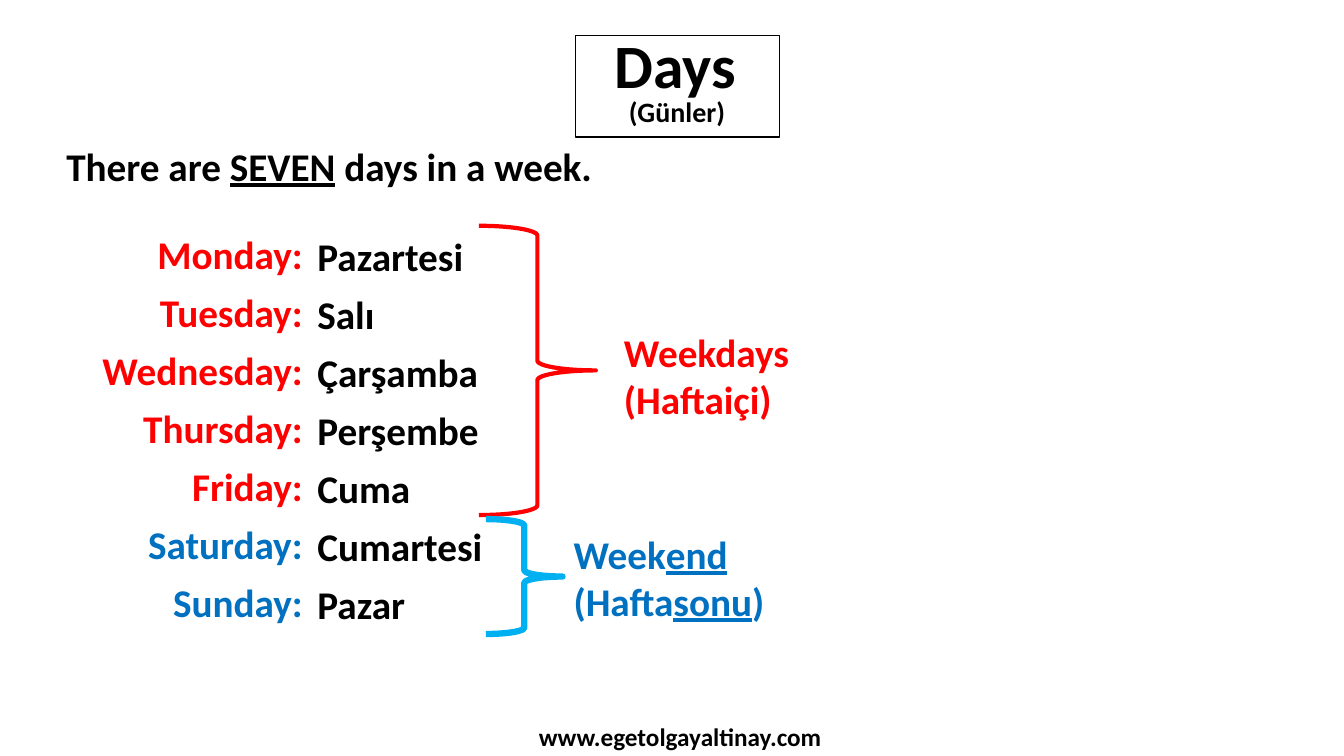
from pptx import Presentation
from pptx.dml.color import RGBColor
from pptx.enum.shapes import MSO_SHAPE
from pptx.enum.text import MSO_ANCHOR, MSO_AUTO_SIZE, PP_ALIGN
from pptx.util import Inches, Pt

LEFT, CENTER, RIGHT = PP_ALIGN.LEFT, PP_ALIGN.CENTER, PP_ALIGN.RIGHT
RECTANGLE, BRACE = MSO_SHAPE.RECTANGLE, MSO_SHAPE.RIGHT_BRACE
TOP, GROW = MSO_ANCHOR.TOP, MSO_AUTO_SIZE.SHAPE_TO_FIT_TEXT

BLACK, WHITE, RED, BLUE, SKY = "000000", "FFFFFF", "FF0000", "0070C0", "00B0F0"

# Content: a paragraph is a list of runs, each with its text and underline
SENTENCE = [[("There are ", False), ("SEVEN", True), (" days in a week.", False)]]
DAYS = [
    ("Monday:", "Pazartesi", RED),
    ("Tuesday:", "Salı", RED),
    ("Wednesday:", "Çarşamba", RED),
    ("Thursday:", "Perşembe", RED),
    ("Friday:", "Cuma", RED),
    ("Saturday:", "Cumartesi", BLUE),
    ("Sunday:", "Pazar", BLUE),
]
WEEKDAYS = [[("Weekdays", False)], [("(Haftaiçi)", False)]]
WEEKEND = [
    [("Week", False), ("end", True)],
    [("(Hafta", False), ("sonu", True), (")", False)],
]

# Grid of day names, in inches
FIRST_ROW, ROW_STEP, ROW_HEIGHT = 2.24, 0.574, 0.57
ENGLISH_LEFT, TURKISH_LEFT, COLUMN_WIDTH = 0.56, 3.05, 2.54
TURKISH_DROP = 0.02


def color(hex_string):
    return RGBColor.from_string(hex_string)


def place(shape, left, top, width, height):
    shape.left, shape.top = Inches(left), Inches(top)
    shape.width, shape.height = Inches(width), Inches(height)


def write(shape, paragraphs, size=28, hex_color=BLACK, align=LEFT):
    frame = shape.text_frame
    frame.word_wrap, frame.auto_size, frame.vertical_anchor = True, GROW, TOP
    for index, runs in enumerate(paragraphs):
        paragraph = frame.add_paragraph() if index else frame.paragraphs[0]
        paragraph.alignment = align
        for text, underlined in runs:
            run = paragraph.add_run()
            run.text = text
            if underlined:
                run.font.underline = True
        font = paragraph.font
        font.name, font.size, font.bold = "Calibri", Pt(size), True
        font.color.rgb = color(hex_color)


def add_text(slide, box, paragraphs, **style):
    write(slide.shapes.add_textbox(*map(Inches, box)), paragraphs, **style)


def add_outline(slide, kind, box, line_color, line_width):
    shape = slide.shapes.add_shape(kind, *map(Inches, box))
    shape.shadow.inherit = False
    shape.fill.background()
    shape.line.color.rgb = color(line_color)
    shape.line.width = Pt(line_width)
    return shape


def main():
    presentation = Presentation()
    presentation.slide_width, presentation.slide_height = Inches(13.33), Inches(7.5)
    slide = presentation.slides.add_slide(presentation.slide_layouts[5])

    # Framed title, with the title in front of its frame
    frame = add_outline(slide, RECTANGLE, (5.71, 0.35, 2.02, 1.01), BLACK, 1)
    frame.fill.solid()
    frame.fill.fore_color.rgb = color(WHITE)
    title = slide.shapes.title
    place(title, 5.69, 0.22, 2.02, 0.84)
    write(title, [[("Days", False)]], size=44, align=CENTER)
    frame.element.addnext(title.element)
    add_text(slide, (1.6, 0.89, 10.23, 0.44), [[("(Günler)", False)]], size=20, align=CENTER)

    add_text(slide, (0.56, 1.36, 7.37, 0.57), SENTENCE)

    # Day names in two columns
    for row, (english, turkish, day_color) in enumerate(DAYS):
        top = FIRST_ROW + row * ROW_STEP
        add_text(slide, (ENGLISH_LEFT, top, COLUMN_WIDTH, ROW_HEIGHT),
                 [[(english, False)]], hex_color=day_color, align=RIGHT)
        add_text(slide, (TURKISH_LEFT, top + TURKISH_DROP, COLUMN_WIDTH, ROW_HEIGHT),
                 [[(turkish, False)]])

    # Braces and the groups they name
    add_outline(slide, BRACE, (4.75, 2.24, 1.16, 2.87), RED, 3)
    add_outline(slide, BRACE, (4.82, 5.15, 0.76, 1.14), SKY, 4.5)
    add_text(slide, (6.09, 3.21, 2.42, 1.04), WEEKDAYS, hex_color=RED)
    add_text(slide, (5.59, 5.21, 2.42, 1.04), WEEKEND, hex_color=BLUE)

    # Web address
    add_text(slide, (4.59, 7.11, 4.31, 0.4), [[("www.egetolgayaltinay.com", False)]],
             size=18, align=CENTER)

    presentation.save("out.pptx")


if __name__ == "__main__":
    main()
